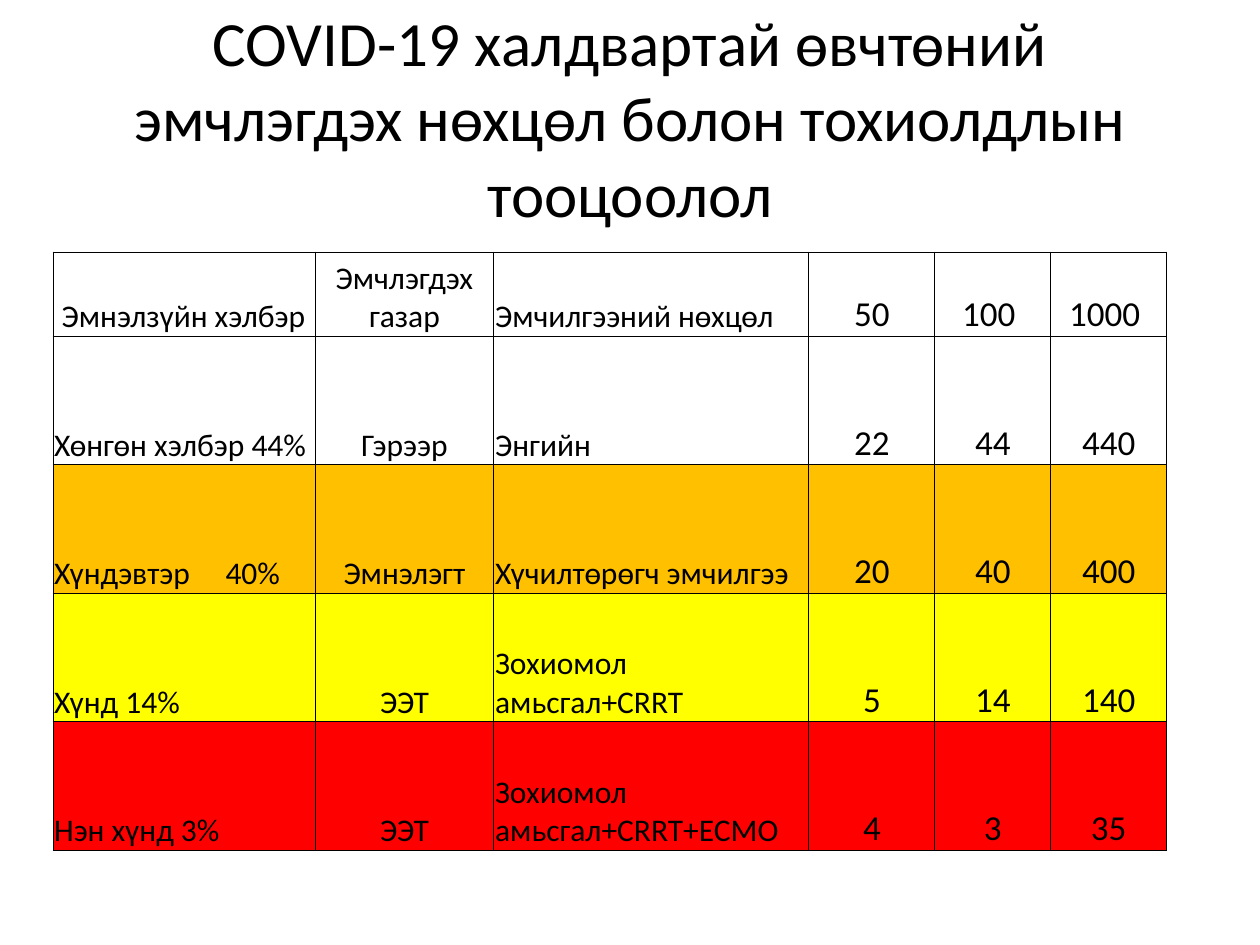
import pptx
import pptx.dml.color
import pptx.enum.text
import pptx.oxml
import pptx.oxml.ns
import pptx.util
from pptx.util import Inches

COLORS = {
    "text": "000000", "border": "000000", "plain": "FFFFFF",
    "moderate": "FFC000", "severe": "FFFF00", "critical": "FF0000",
}
ALIGN = pptx.enum.text.PP_ALIGN
ANCHOR = pptx.enum.text.MSO_ANCHOR

COLUMN_WIDTHS = [2.08, 1.42, 2.5, 1, 0.92, 0.92]
HEADER_HEIGHT, ROW_HEIGHT = 0.67, 1.02
COLUMN_ALIGN = [ALIGN.LEFT, ALIGN.CENTER, ALIGN.LEFT] + [ALIGN.CENTER] * 3
COLUMN_SIZES = [18] * 3 + [20] * 3
ROWS = [
    ("plain", ["Эмнэлзүйн хэлбэр", "Эмчлэгдэх газар", "Эмчилгээний нөхцөл",
               "50", "100 ", "1000 "]),
    ("plain", ["Хөнгөн хэлбэр 44%", "Гэрээр", "Энгийн", "22", "44", "440"]),
    ("moderate", ["Хүндэвтэр\t40%", "Эмнэлэгт", "Хүчилтөрөгч эмчилгээ",
                  "20", "40", "400"]),
    ("severe", ["Хүнд 14%", "ЭЭТ", "Зохиомол амьсгал+CRRT", "5", "14", "140"]),
    ("critical", ["Нэн хүнд 3%", "ЭЭТ", "Зохиомол амьсгал+CRRT+ECMO",
                  "4", "3", "35"]),
]


def apply_format(target, values):
    for name, value in values.items():
        setattr(target, name, value)


class SlideBuilder:
    font_name = "Calibri"
    border_width = pptx.util.Pt(0.5)
    cell_format = {
        "vertical_anchor": ANCHOR.BOTTOM, "margin_left": Inches(0.01),
        "margin_right": Inches(0.01), "margin_top": Inches(0.01),
        "margin_bottom": 0,
    }

    def __init__(self, slide):
        self.slide = slide

    def add_text(self, paragraph, text, size, align):
        paragraph.alignment = align
        run = paragraph.add_run()
        run.text = text
        apply_format(run.font, {"name": self.font_name,
                                "size": pptx.util.Pt(size), "bold": False})
        run.font.color.rgb = pptx.dml.color.RGBColor.from_string(COLORS["text"])

    def title(self, text, left, top, width, height, size):
        shape = self.slide.shapes.title
        apply_format(shape, {"left": Inches(left), "top": Inches(top),
                             "width": Inches(width), "height": Inches(height)})
        apply_format(shape.text_frame, {
            "word_wrap": True, "vertical_anchor": ANCHOR.MIDDLE,
            "auto_size": pptx.enum.text.MSO_AUTO_SIZE.NONE})
        self.add_text(shape.text_frame.paragraphs[0], text, size, ALIGN.CENTER)

    def borders(self, cell):
        properties = cell._tc.get_or_add_tcPr()
        for position, side in enumerate(("lnL", "lnR", "lnT", "lnB")):
            properties.insert(position, pptx.oxml.parse_xml(
                f'<a:{side} {pptx.oxml.ns.nsdecls("a")} w="{self.border_width}">'
                f'<a:solidFill><a:srgbClr val="{COLORS["border"]}"/></a:solidFill>'
                f'</a:{side}>'))

    def cell(self, cell, text, size, align, fill):
        apply_format(cell, self.cell_format)
        cell.fill.solid()
        cell.fill.fore_color.rgb = pptx.dml.color.RGBColor.from_string(COLORS[fill])
        self.borders(cell)
        self.add_text(cell.text_frame.paragraphs[0], text, size, align)

    def table(self, rows, left, top):
        heights = [HEADER_HEIGHT] + [ROW_HEIGHT] * (len(rows) - 1)
        table = self.slide.shapes.add_table(
            len(rows), len(COLUMN_WIDTHS), Inches(left), Inches(top),
            Inches(sum(COLUMN_WIDTHS)), Inches(sum(heights))).table
        apply_format(table, {"first_row": False, "horz_banding": False})
        for column, width in zip(table.columns, COLUMN_WIDTHS):
            column.width = Inches(width)
        for row, height, (fill, texts) in zip(table.rows, heights, rows):
            row.height = Inches(height)
            for cell, text, size, align in zip(row.cells, texts, COLUMN_SIZES,
                                               COLUMN_ALIGN):
                self.cell(cell, text, size, align, fill)
        return table

    def indent(self, cell, distance):
        properties = cell.text_frame.paragraphs[0]._p.get_or_add_pPr()
        properties.set("marL", str(Inches(distance)))

    def tab_stop(self, cell, distance):
        properties = cell.text_frame.paragraphs[0]._p.get_or_add_pPr()
        properties.append(pptx.oxml.parse_xml(
            f'<a:tabLst {pptx.oxml.ns.nsdecls("a")}>'
            f'<a:tab pos="{Inches(distance)}" algn="l"/></a:tabLst>'))


def main():
    presentation = pptx.Presentation()
    apply_format(presentation, {"slide_width": Inches(10),
                                "slide_height": Inches(7.5)})
    title_only = presentation.slide_layouts[5]
    builder = SlideBuilder(presentation.slides.add_slide(title_only))

    # Title
    builder.title("COVID-19 халдвартай өвчтөний эмчлэгдэх нөхцөл болон "
                  "тохиолдлын тооцоолол", 0.5, 0.3, 9, 1.25, 36)

    # Cases by severity, with the small offsets in the first column
    table = builder.table(ROWS, 0.42, 2)
    builder.indent(table.cell(0, 0), 0.06)
    builder.tab_stop(table.cell(2, 0), 1.36)

    presentation.save("out.pptx")


if __name__ == "__main__":
    main()
